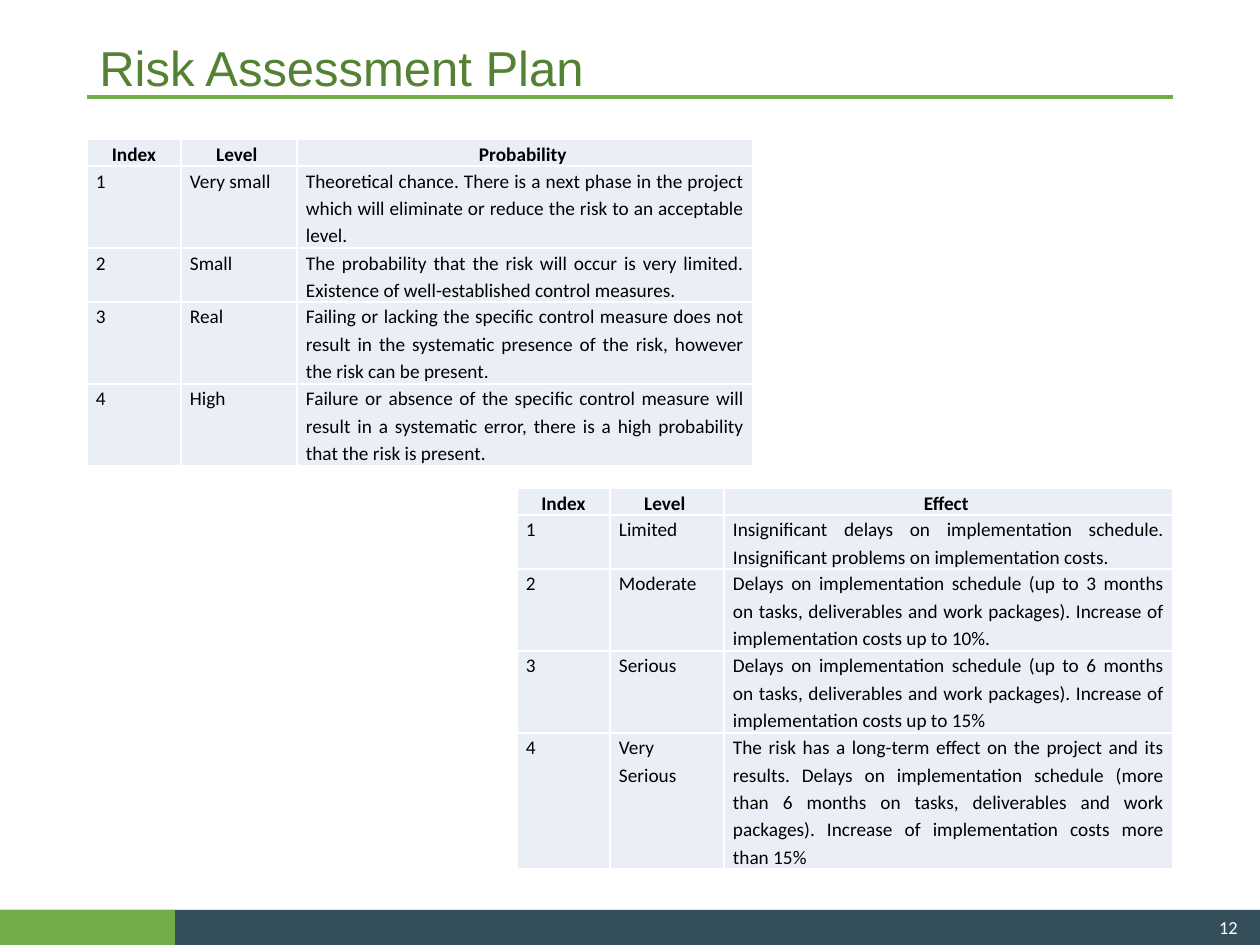
import pptx
import pptx.util
import pptx.dml.color
import pptx.enum.shapes
import pptx.enum.text
import pptx.oxml.ns
from lxml import etree

Pt = pptx.util.Pt
Align = pptx.enum.text.PP_ALIGN
Anchor = pptx.enum.text.MSO_ANCHOR
qn = pptx.oxml.ns.qn


def px(*nums):
    return [pptx.util.Emu(round(n * 914400 / 126)) for n in nums]


def rgb(code):
    return pptx.dml.color.RGBColor.from_string(code)


deck = pptx.Presentation()
deck.slide_width, deck.slide_height = px(1260, 945)
slide = deck.slides.add_slide(deck.slide_layouts[6])

# Footer bars
for width, fill in ((1260, "344F59"), (175, "70AD47")):
    bar = slide.shapes.add_shape(
        pptx.enum.shapes.MSO_SHAPE.RECTANGLE, *px(0, 910, width, 35))
    bar.shadow.inherit = False
    bar.fill.solid()
    bar.fill.fore_color.rgb = rgb(fill)
    bar.line.fill.background()

# Rule under the title
rule = slide.shapes.add_connector(
    pptx.enum.shapes.MSO_CONNECTOR.STRAIGHT, *px(87, 97, 1173, 97))
rule.line.color.rgb = rgb("70AD47")
rule.line.width = Pt(2.25)
etree.SubElement(rule._element.spPr, qn("a:effectLst"))

# Title and page number
labels = [
    ("Risk Assessment Plan", (87, 34, 1086, 74), 28, "Arial", "548235", Align.LEFT, 0.9),
    ("12", (966, 911, 284, 32), 10.5, "Calibri", "FFFFFF", Align.RIGHT, 1.0),
]
for text, spot, size, face, color, align, gap in labels:
    frame = slide.shapes.add_textbox(*px(*spot)).text_frame
    frame.word_wrap = True
    frame.vertical_anchor = Anchor.MIDDLE
    para = frame.paragraphs[0]
    para.alignment = align
    para.line_spacing = gap
    run = para.add_run()
    run.text = text
    run.font.size = Pt(size)
    run.font.name = face
    run.font.color.rgb = rgb(color)

# Risk scales: place, column widths, row heights, cells
odds = [
    (" Index ", "Level ", "Probability "),
    ("1", "Very small", "Theoretical chance. There is a next phase in the project "
     "which will eliminate or reduce the risk to an acceptable level."),
    ("2", "Small", "The probability that the risk will occur is very limited. "
     "Existence of well-established control measures."),
    ("3", "Real", "Failing or lacking the specific control measure does not result in "
     "the systematic presence of the risk, however the risk can be present."),
    ("4", "High", "Failure or absence of the specific control measure will result in "
     "a systematic error, there is a high probability that the risk is present."),
]
effects = [
    (" Index ", "Level ", "Effect "),
    ("1", "Limited", "Insignificant delays on implementation schedule. "
     "Insignificant problems on implementation costs."),
    ("2", "Moderate", "Delays on implementation schedule (up to 3 months on tasks, "
     "deliverables and work packages). Increase of implementation costs up to 10%."),
    ("3", "Serious", "Delays on implementation schedule (up to 6 months on tasks, "
     "deliverables and work packages). Increase of implementation costs up to 15%"),
    ("4", "Very Serious", "The risk has a long-term effect on the project and its results. "
     "Delays on implementation schedule (more than 6 months on tasks, deliverables and "
     "work packages). Increase of implementation costs more than 15%"),
]
scales = [
    (87, 139, (94, 116, 456), (27, 82, 54, 82, 82), odds),
    (517, 488, (93, 114, 449), (27, 54, 82, 82, 136), effects),
]
for left, top, cols, rows, cells in scales:
    table = slide.shapes.add_table(
        len(rows), len(cols), *px(left, top, sum(cols), sum(rows))).table
    table.first_row = table.horz_banding = False
    for col, width in zip(table.columns, px(*cols)):
        col.width = width
    for row, height in zip(table.rows, px(*rows)):
        row.height = height

    for r, line in enumerate(cells):
        for c, text in enumerate(line):
            cell = table.cell(r, c)
            cell.margin_left, cell.margin_right = px(9, 9)
            cell.margin_top = cell.margin_bottom = 0

            # White borders go ahead of the fill
            for side in ("a:lnL", "a:lnR", "a:lnT", "a:lnB"):
                edge = etree.SubElement(
                    cell._tc.get_or_add_tcPr(), qn(side), w=str(Pt(1)))
                paint = etree.SubElement(edge, qn("a:solidFill"))
                etree.SubElement(paint, qn("a:srgbClr"), val="FFFFFF")
            cell.fill.solid()
            cell.fill.fore_color.rgb = rgb("EAEFF7")

            para = cell.text_frame.paragraphs[0]
            para.alignment = Align.JUSTIFY if r else Align.CENTER
            para.line_spacing = 1.15
            para.space_before = Pt(12)
            para.space_after = Pt(10)
            run = para.add_run()
            run.text = text
            run.font.size = Pt(11)
            run.font.name = "Calibri"
            run.font.bold = r == 0
            run.font.color.rgb = rgb("000000")

deck.save("out.pptx")
